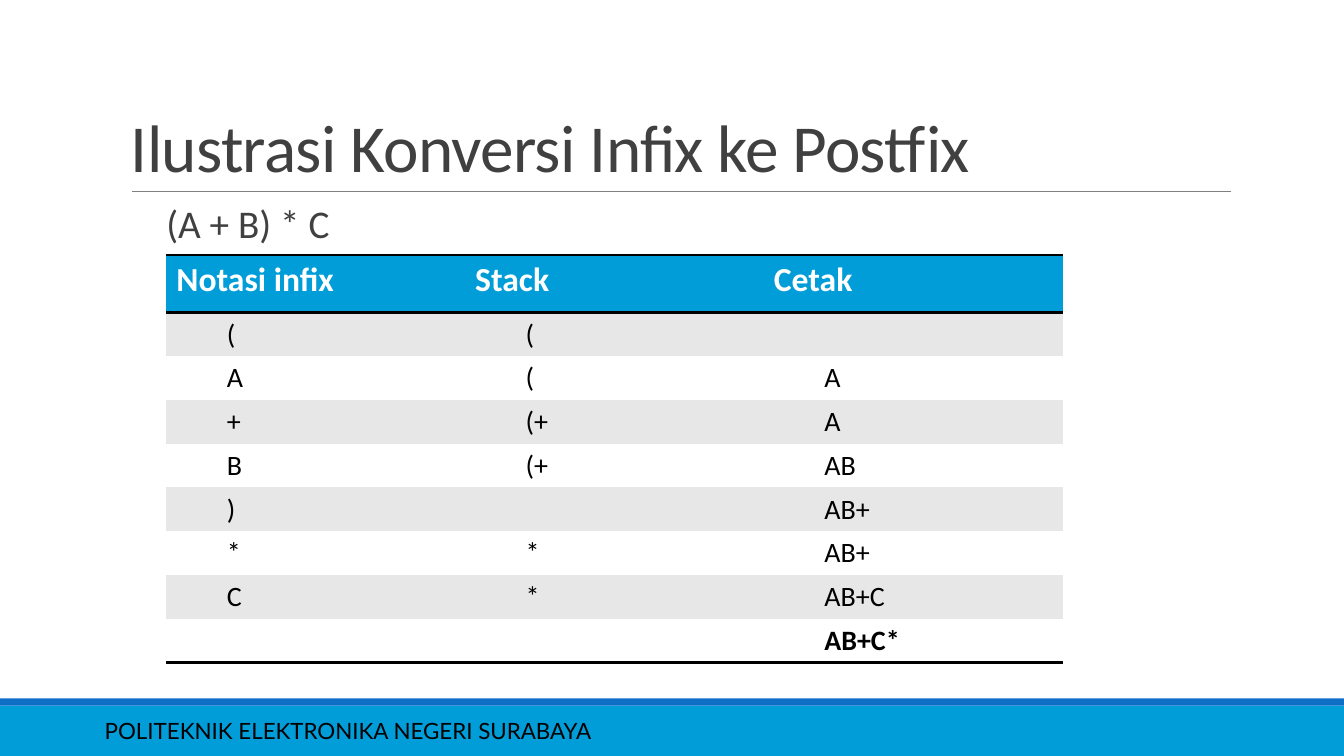
from lxml import etree
from pptx import Presentation
from pptx.dml.color import RGBColor
from pptx.enum.shapes import MSO_CONNECTOR, MSO_SHAPE
from pptx.enum.text import MSO_ANCHOR
from pptx.oxml import parse_xml
from pptx.oxml.ns import nsdecls, qn
from pptx.util import Inches, Pt

COLORS = {
    "sky": "009DD9", "blue": "0F6FC6", "rule": "808080", "ink": "404040",
    "black": "000000", "white": "FFFFFF", "band": "E7E7E7",
}
BARS = [((0, 7, 13.33, 0.5), "sky"), ((0, 6.93, 13.33, 0.07), "blue")]
TITLE_RULE = (1.31, 1.9, 12.21, 1.9)
TEXTS = [
    {"text": "POLITEKNIK ELEKTRONIKA NEGERI SURABAYA", "at": (0.94, 7.05, 8.41, 0.4),
     "frame": {"vertical_anchor": MSO_ANCHOR.MIDDLE},
     "font": {"name": "Lato", "size": Pt(16)}, "color": "black"},
    {"text": "Ilustrasi Konversi Infix ke Postfix", "at": (1.2, 0.31, 11, 1.59),
     "frame": {"vertical_anchor": MSO_ANCHOR.BOTTOM}, "paragraph": {"line_spacing": 0.85},
     "font": {"name": "Calibri", "size": Pt(48)}, "color": "ink", "spacing": -50},
    {"text": "(A + B) * C", "at": (1.65, 2.02, 3.28, 0.51),
     "frame": {"margin_left": 0, "margin_right": 0},
     "paragraph": {"line_spacing": 0.8, "space_after": Pt(2)},
     "font": {"name": "Calibri", "size": Pt(28)}, "color": "ink"},
]
STEPS = [
    ("Notasi infix", "Stack", "Cetak"),
    ("(", "(", ""),
    ("A", "(", "A"),
    ("+", "(+", "A"),
    ("B", "(+", "AB"),
    (")", "", "AB+"),
    ("*", "*", "AB+"),
    ("C", "*", "AB+C"),
    ("", "", "AB+C*"),
]
TABLE_AT = (1.65, 2.53, 8.89, 4.04)
HEADER_HEIGHT = 0.57
NO_STYLE = "{2D5ABB26-0587-4C30-8999-92F81FD0307C}"


def set_all(target, values):
    for name, value in values.items():
        setattr(target, name, value)


def rgb(name):
    return RGBColor.from_string(COLORS[name])


def add_bar(slide, at, color):
    bar = slide.shapes.add_shape(MSO_SHAPE.RECTANGLE, *map(Inches, at))
    bar.shadow.inherit = False
    bar.fill.solid()
    bar.fill.fore_color.rgb = rgb(color)
    bar.line.fill.background()


def add_title_rule(slide):
    rule = slide.shapes.add_connector(MSO_CONNECTOR.STRAIGHT, *map(Inches, TITLE_RULE))
    rule.line.color.rgb = rgb("rule")
    rule.line.width = Pt(0.5)
    etree.SubElement(rule._element.spPr, qn("a:effectLst"))


def add_text(slide, item):
    frame = slide.shapes.add_textbox(*map(Inches, item["at"])).text_frame
    set_all(frame, {"word_wrap": True, **item["frame"]})
    paragraph = frame.paragraphs[0]
    set_all(paragraph, item.get("paragraph", {}))
    run = paragraph.add_run()
    run.text = item["text"]
    set_all(run.font, item["font"])
    run.font.color.rgb = rgb(item["color"])
    if "spacing" in item:
        run._r.get_or_add_rPr().set("spc", str(item["spacing"]))


def add_border(cell, side):
    cell._tc.get_or_add_tcPr().append(parse_xml(
        f'<a:{side} {nsdecls("a")} w="{Pt(2)}"><a:solidFill>'
        f'<a:srgbClr val="{COLORS["black"]}"/></a:solidFill></a:{side}>'))


def fill_cell(cell, text, row):
    header, last = row == 0, row == len(STEPS) - 1
    sides = ("lnT", "lnB") if header else ("lnB",) if last else ()
    for side in sides:
        add_border(cell, side)
    cell.fill.solid()
    cell.fill.fore_color.rgb = rgb("sky" if header else "band" if row % 2 else "white")
    paragraph = cell.text_frame.paragraphs[0]
    if not header:
        paragraph.level = 1
        paragraph._p.get_or_add_pPr().set("marL", str(Inches(0.5)))
    if text:
        run = paragraph.add_run()
        run.text = text
        set_all(run.font, {"name": "Calibri", "size": Pt(24 if header else 20),
                           "bold": header or last})
        run.font.color.rgb = rgb("white" if header else "black")


def add_steps_table(slide):
    columns = len(STEPS[0])
    table = slide.shapes.add_table(len(STEPS), columns, *map(Inches, TABLE_AT)).table
    set_all(table, {"first_row": False, "horz_banding": False})
    table._tbl.tblPr.find(qn("a:tableStyleId")).text = NO_STYLE
    step_height = (TABLE_AT[3] - HEADER_HEIGHT) / (len(STEPS) - 1)
    for column in table.columns:
        column.width = Inches(TABLE_AT[2] / columns)
    for row, texts in enumerate(STEPS):
        table.rows[row].height = Inches(step_height if row else HEADER_HEIGHT)
        for column, text in enumerate(texts):
            fill_cell(table.cell(row, column), text, row)


def main():
    """Build the infix to postfix conversion slide."""
    presentation = Presentation()
    set_all(presentation, {"slide_width": Inches(13.33), "slide_height": Inches(7.5)})
    slide = presentation.slides.add_slide(presentation.slide_layouts[6])
    for at, color in BARS:
        add_bar(slide, at, color)
    add_title_rule(slide)
    for item in TEXTS:
        add_text(slide, item)
    add_steps_table(slide)
    presentation.save("out.pptx")


if __name__ == "__main__":
    main()
